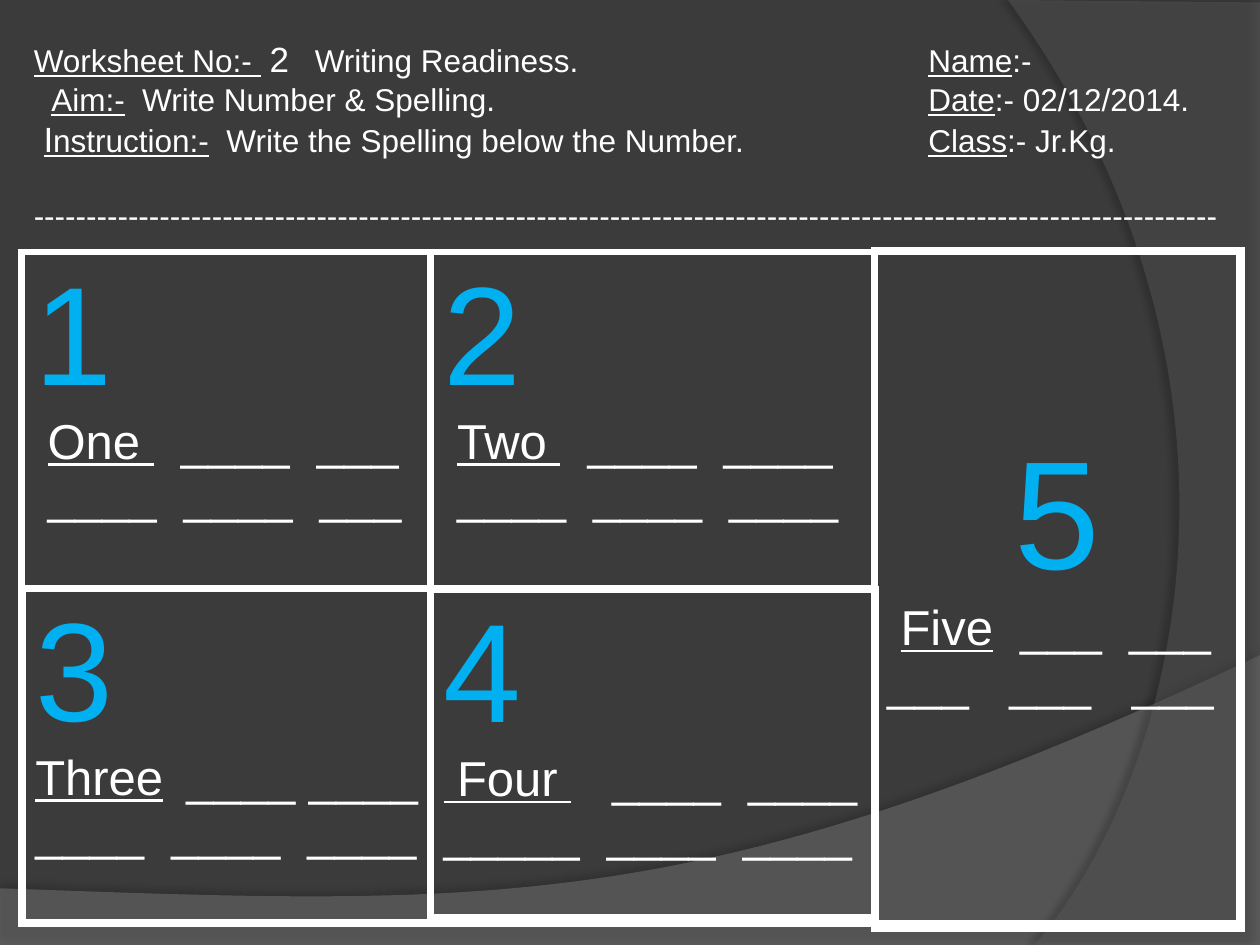
import pptx
import pptx.util
import pptx.dml.color
import pptx.enum.text
import pptx.oxml
import pptx.oxml.ns
from lxml import etree

Inches, Pt = pptx.util.Inches, pptx.util.Pt
RGBColor = pptx.dml.color.RGBColor
CENTER = pptx.enum.text.PP_ALIGN.CENTER
qn = pptx.oxml.ns.qn

WIDTH, HEIGHT = 10, 7.5
UNITS = 1000  # outline units per inch
FONT = "Arial"
DARK = RGBColor(0x3B, 0x3B, 0x3B)
WAVE = RGBColor(0x7F, 0x7F, 0x7F)
ARC = RGBColor(0x5E, 0x5E, 0x5E)
WHITE = RGBColor(0xFF, 0xFF, 0xFF)
BLUE = RGBColor(0x00, 0xB0, 0xF0)
BORDER_PT = 4.5

# straight corners, then the control points and end of the closing curve
WAVE_EDGE = [(0, HEIGHT), (WIDTH, HEIGHT), (WIDTH, 5.2)]
WAVE_CURVE = [(5.59, 7.29), (3.91, 7.19), (0, 7.05)]
ARC_EDGE = [(WIDTH, 0.02), (WIDTH, HEIGHT), (8.21, HEIGHT)]
ARC_CURVE = [(9.35, 6.19), (10.18, 3), (8, 0)]

# Runs are (text, format); tabs lead to the stops listed first.
U = {"underline": True}
TOPIC_TAB, RIGHT_TAB = 2.23, 7.1
HEADER = [
    ([TOPIC_TAB, RIGHT_TAB],
     [("Worksheet No:- ", U), (" ", {}), ("2", {"size": 20}),
      ("\tWriting Readiness.\t", {}), ("Name", U), (":-", {})]),
    ([RIGHT_TAB],
     [("  ", {}), ("Aim:-", U), ("  Write Number & Spelling.\t", {}),
      ("Date", U), (":- 02/12/2014.", {})]),
    ([RIGHT_TAB],
     [(" ", {"size": 20}), ("I", {"size": 20, **U}), ("nstruction:-", U),
      ("  Write the Spelling below the Number.\t", {}),
      ("Class", U), (":- Jr.Kg.", {})]),
]
RULE = "-" * 113
RULE_GAP_PT = 20.7

LEFT, TOP, MIDDLE = 0.17, 2, 4.67
COL2, COL3 = 3.42, 6.94
# box, number, runs of the word line, blanks below
CARDS = [
    ((LEFT, TOP, 9.67, 5.33), "1",
     [(" ", {}), ("One ", U), ("  ____  ___", {})], " ____  ____  ___"),
    ((COL2, TOP, COL3 - COL2, 5.28), "2",
     [(" ", {}), ("Two ", U), ("  ____  ____", {})], " ____  ____  ____"),
    ((LEFT + 0.01, MIDDLE, 6.76, 2.65), "3",
     [("Three", U), ("  ", {"size": 24}), ("____ ____", {})], "____  ____  ____"),
    ((COL2, MIDDLE + 0.01, 3.53, 2.63), "4",
     [(" Four ", U), ("   ____  ____", {})], "_____  ____  ____"),
    ((COL3, TOP - 0.01, 2.91, 5.38), "5",
     [(" ", {}), ("Five", U), ("  ___  ___", {})], "___   ___   ___"),
]
TALL_CARD, TALL_MARGIN = "5", 1.42


def add_run(p, text, size=18, color=WHITE, underline=False):
    r = p.add_run()
    r.text = text
    r.font.name, r.font.size = FONT, Pt(size)
    r.font.color.rgb = color
    r.font.underline = underline


def set_tabs(p, stops):
    tabs = etree.SubElement(p._p.get_or_add_pPr(), qn("a:tabLst"))
    for stop in stops:
        etree.SubElement(tabs, qn("a:tab"), pos=str(Inches(stop)), algn="l")


def add_backdrop(s, edge, curve, color, opacity, shadow):
    """Translucent shape; shadow is opacity, blur pt, distance pt, direction."""
    corners = [(x * UNITS, y * UNITS) for x, y in edge + curve[-1:]]
    builder = s.shapes.build_freeform(*corners[0], scale=Inches(1) / UNITS)
    builder.add_line_segments(corners[1:], close=True)
    sp = builder.convert_to_shape()
    left, top = (min(axis) for axis in zip(*corners))

    last_line = list(sp._element.iter(qn("a:lnTo")))[-1]
    bend = etree.Element(qn("a:cubicBezTo"))
    for x, y in curve:
        etree.SubElement(bend, qn("a:pt"), x=str(round(x * UNITS - left)),
                         y=str(round(y * UNITS - top)))
    last_line.getparent().replace(last_line, bend)

    sp.shadow.inherit = False
    sp.line.fill.background()
    sp.fill.solid()
    sp.fill.fore_color.rgb = color
    fill_clr = sp._element.spPr.find(qn("a:solidFill"))[0]
    etree.SubElement(fill_clr, qn("a:alpha"), val=str(opacity * 1000))
    alpha, blur, dist, angle = shadow
    outer = etree.SubElement(sp._element.spPr.find(qn("a:effectLst")), qn("a:outerShdw"),
                             blurRad=str(Pt(blur)), dist=str(Pt(dist)),
                             dir=str(angle * 60000), algn="ctr", rotWithShape="0")
    clr = etree.SubElement(outer, qn("a:srgbClr"), val="000000")
    etree.SubElement(clr, qn("a:alpha"), val=str(alpha * 1000))


def add_header(s):
    tf = s.shapes.add_textbox(Inches(LEFT), Inches(0.25), Inches(9.67), Inches(1.68)).text_frame
    tf.word_wrap = True
    for i, (tabs, runs) in enumerate(HEADER):
        p = tf.add_paragraph() if i else tf.paragraphs[0]
        set_tabs(p, tabs)
        for text, fmt in runs:
            add_run(p, text, **fmt)
    p = tf.add_paragraph()
    p.space_before = Pt(RULE_GAP_PT)
    add_run(p, RULE)


def set_borders(cell):
    tc_pr = cell._tc.get_or_add_tcPr()
    for i, side in enumerate(("lnL", "lnR", "lnT", "lnB")):
        ln = etree.Element(qn("a:" + side), w=str(Pt(BORDER_PT)))
        fill = etree.SubElement(ln, qn("a:solidFill"))
        etree.SubElement(fill, qn("a:srgbClr"), val=str(WHITE))
        tc_pr.insert(i, ln)


def add_card(s, box, number, word_line, blanks):
    table = s.shapes.add_table(1, 1, *map(Inches, box)).table
    table.first_row = table.horz_banding = False
    cell = table.cell(0, 0)
    cell.fill.background()
    set_borders(cell)
    tf = cell.text_frame
    p = tf.paragraphs[0]
    tall = number == TALL_CARD
    if tall:
        cell.margin_top = Inches(TALL_MARGIN)
        p.alignment = CENTER
    add_run(p, number, size=88 if tall else 80, color=BLUE)
    for runs in (word_line, [(blanks, {})]):
        p = tf.add_paragraph()
        for text, fmt in runs:
            add_run(p, text, **{"size": 28, **fmt})


def main():
    prs = pptx.Presentation()
    prs.slide_width, prs.slide_height = Inches(WIDTH), Inches(HEIGHT)
    s = prs.slides.add_slide(prs.slide_layouts[6])
    s.background.fill.solid()
    s.background.fill.fore_color.rgb = DARK

    add_backdrop(s, WAVE_EDGE, WAVE_CURVE, WAVE, 45, (35, 4, 3.5, 270))
    add_backdrop(s, ARC_EDGE, ARC_CURVE, ARC, 40, (45, 4, 4, 180))
    add_header(s)
    for card in CARDS:
        add_card(s, *card)
    prs.save("out.pptx")


if __name__ == "__main__":
    main()
